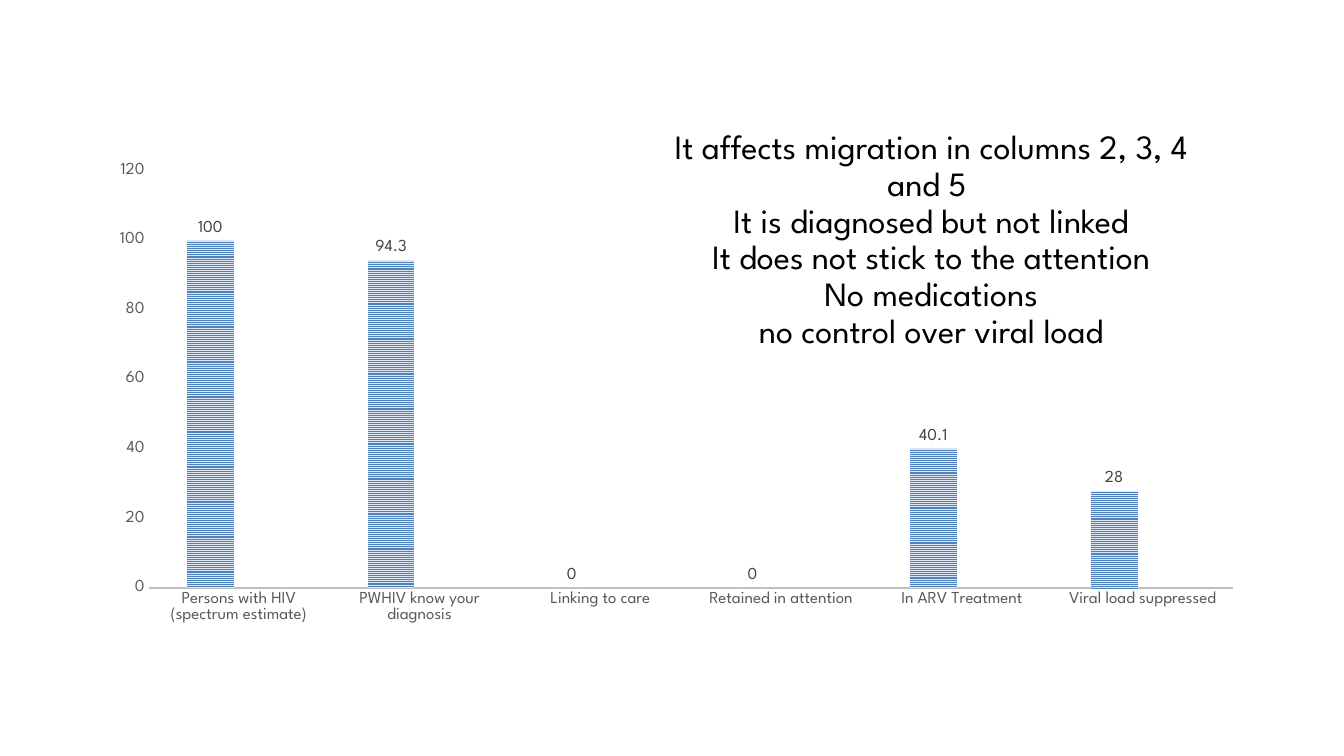
from dataclasses import dataclass

from lxml import etree
from pptx import Presentation
from pptx.chart.chart import Chart
from pptx.chart.data import CategoryChartData as Data
from pptx.dml.color import RGBColor
from pptx.enum.chart import XL_CHART_TYPE as Kind
from pptx.enum.chart import XL_LABEL_POSITION as Place
from pptx.enum.chart import XL_TICK_MARK as Tick
from pptx.enum.dml import MSO_PATTERN as Pattern
from pptx.enum.text import MSO_ANCHOR as Anchor
from pptx.enum.text import PP_ALIGN as Align
from pptx.oxml import parse_xml
from pptx.oxml.ns import nsdecls
from pptx.slide import Slide
from pptx.text.text import Font
from pptx.util import Inches, Pt

FACE = "League Spartan"
STEPS = [
    "Persons with HIV (spectrum estimate)",
    "PWHIV know your diagnosis",
    "Linking to care",
    "Retained in attention",
    "In ARV Treatment",
    "Viral load suppressed",
]
NOTES = [
    "It affects migration in columns 2, 3, 4 and 5 ",
    "It is diagnosed but not linked",
    "It does not stick to the attention",
    "No medications",
    "no control over viral load",
]


@dataclass
class Series:
    name: str
    values: list[float | None]
    fore: str
    back: str


ROWS = [
    Series("Series 1", [100, 94.3, 0, 0, 40.1, 28], "4F81BD", "DCE6F2"),
    Series("Series 2", [None] * len(STEPS), "C0504D", "F2DCDB"),
]


def tint(code: str) -> RGBColor:
    return RGBColor.from_string(code)


def style(font: Font, size: float, code: str) -> None:
    font.name = FACE
    font.size = Pt(size)
    font.color.rgb = tint(code)


def clear() -> etree.ElementBase:
    return parse_xml(
        f'<c:spPr {nsdecls("c", "a")}><a:noFill/><a:ln><a:noFill/></a:ln></c:spPr>'
    )


def add_notes(slide: Slide) -> None:
    box = slide.shapes.add_textbox(Inches(6.58), Inches(2), Inches(5.31), Inches(1.42))
    frame = box.text_frame
    frame.word_wrap = True
    frame.vertical_anchor = Anchor.MIDDLE
    frame.margin_bottom = Inches(0.7)
    para = frame.paragraphs[0]
    para.alignment = Align.CENTER
    para.line_spacing = 0.9
    for index, line in enumerate(NOTES):
        if index:
            para.add_line_break()
        run = para.add_run()
        run.text = line
        style(run.font, 24.3, "000000")


def style_axes(chart: Chart) -> None:
    steps, scale = chart.category_axis, chart.value_axis
    for axis in (steps, scale):
        axis.major_tick_mark = axis.minor_tick_mark = Tick.NONE
        axis.has_major_gridlines = False
        style(axis.tick_labels.font, 12, "595959")
    steps.format.line.color.rgb = tint("BFBFBF")
    steps.format.line.width = Pt(1.5)
    scale.format.line.fill.background()
    scale.minimum_scale, scale.maximum_scale, scale.major_unit = 0, 120, 20


def add_bars(slide: Slide) -> None:
    data = Data()
    data.categories = STEPS
    for row in ROWS:
        data.add_series(row.name, row.values)
    chart = slide.shapes.add_chart(
        Kind.COLUMN_CLUSTERED,
        Inches(0.96), Inches(1.52), Inches(11.5), Inches(4.76), data,
    ).chart
    chart.has_title = chart.has_legend = False
    style(chart.font, 10, "000000")
    style_axes(chart)
    plot = chart.plots[0]
    plot.gap_width, plot.overlap, plot.vary_by_categories = 164, -22, False
    for row, series in zip(ROWS, plot.series):
        fill = series.format.fill
        fill.patterned()
        fill.pattern = Pattern.NARROW_HORIZONTAL
        fill.fore_color.rgb = tint(row.fore)
        fill.back_color.rgb = tint(row.back)
        labels = series.data_labels
        labels.show_value = True
        labels.position = Place.OUTSIDE_END
        style(labels.font, 12, "404040")
    root = chart.element
    root.chart.plotArea.append(clear())
    root.chart.addnext(clear())


def main() -> None:
    deck = Presentation()
    deck.slide_width, deck.slide_height = Inches(13.33), Inches(7.5)
    slide = deck.slides.add_slide(deck.slide_layouts[6])
    add_notes(slide)
    add_bars(slide)
    deck.save("out.pptx")


if __name__ == "__main__":
    main()
